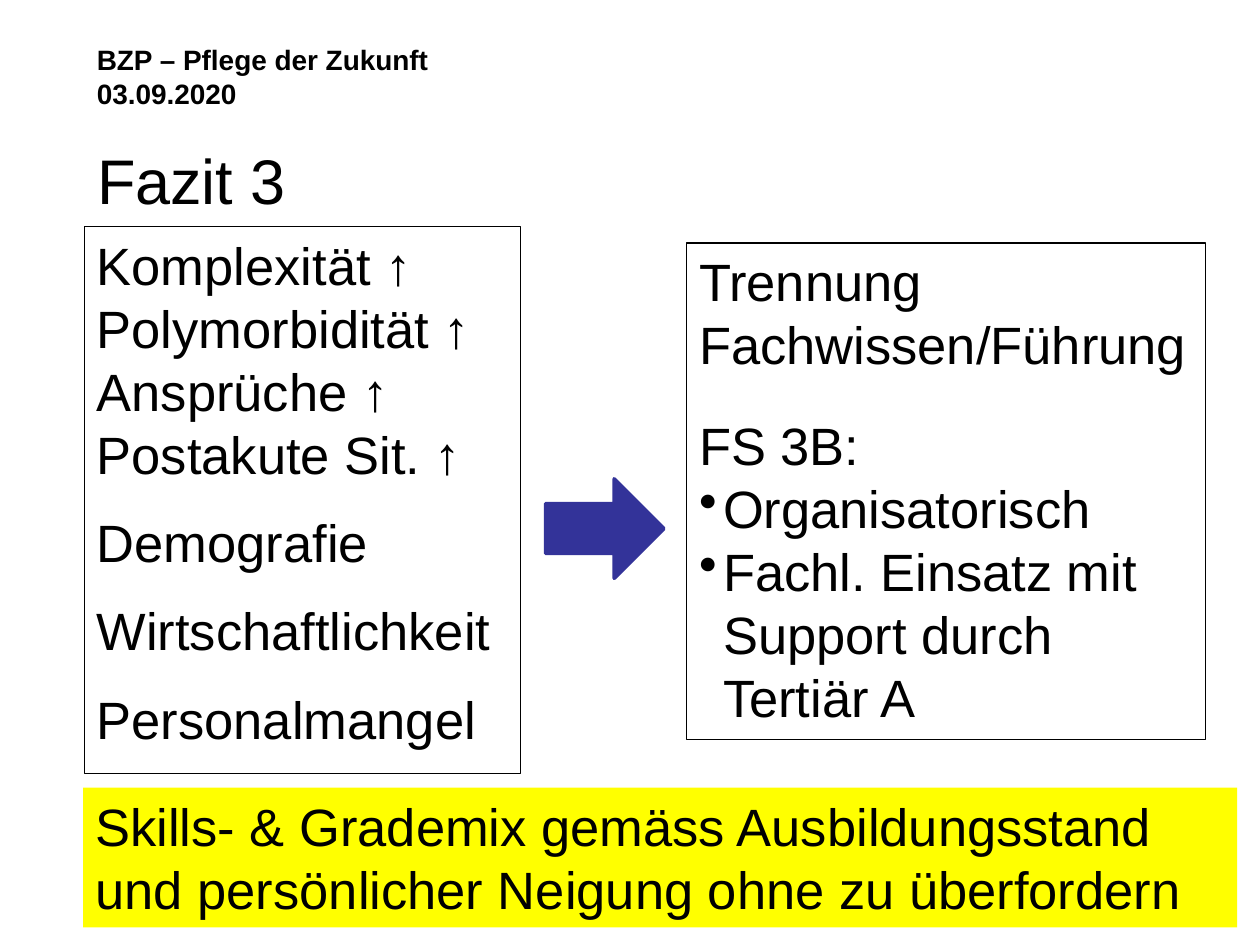
from pptx import Presentation
from pptx.dml.color import RGBColor
from pptx.enum.shapes import MSO_SHAPE as SHAPE
from pptx.enum.text import MSO_ANCHOR as ANCHOR, PP_ALIGN as ALIGN
from pptx.oxml.ns import qn
from pptx.util import Inches, Pt
from lxml.etree import SubElement

BLACK = RGBColor(0x00, 0x00, 0x00)
BLUE = RGBColor(0x33, 0x33, 0x99)
YELLOW = RGBColor(0xFF, 0xFF, 0x00)

FONT = "Arial"
BODY = 30
LEFT = 0.67       # common left edge, inches
SMALL_GAP = 14.4  # points between the topics
LARGE_GAP = 21.6  # points before the list heading


def place(sp, left, top, width, height):
    sp.left, sp.top = Inches(left), Inches(top)
    sp.width, sp.height = Inches(width), Inches(height)


def add_bullet(p, indent=0.19):
    pPr = p._p.get_or_add_pPr()
    pPr.set("marL", str(Inches(indent)))
    pPr.set("indent", str(-Inches(indent)))
    SubElement(pPr, qn("a:buChar")).set("char", "•")


def write(p, text, size=BODY, bold=False, before=0, bullet=False):
    p.alignment = ALIGN.LEFT
    p.line_spacing = 1.0
    p.space_before = Pt(before)
    if bullet:
        add_bullet(p)
    r = p.add_run()
    r.text = text
    r.font.name, r.font.size, r.font.bold = FONT, Pt(size), bold
    r.font.color.rgb = BLACK


def fill_frame(sp, lines, **fmt):
    """Each line is a text, or a pair of text and its own format."""
    tf = sp.text_frame
    tf.word_wrap = True
    tf.vertical_anchor = ANCHOR.TOP
    for i, line in enumerate(lines):
        text, own = (line, {}) if isinstance(line, str) else line
        p = tf.add_paragraph() if i else tf.paragraphs[0]
        write(p, text, **{**fmt, **own})


def add_header(slide, lines, *box):
    sp = slide.shapes.add_textbox(*map(Inches, box))
    fill_frame(sp, lines, size=16, bold=True)


def set_title(slide, text, *box):
    sp = slide.shapes.title
    place(sp, *box)
    fill_frame(sp, [text], size=36)


def add_block(slide, kind, *box, fill=None, line=None, weight=0.75, lines=()):
    sp = slide.shapes.add_shape(kind, *map(Inches, box))
    sp.shadow.inherit = False
    if fill is None:
        sp.fill.background()
    else:
        sp.fill.solid()
        sp.fill.fore_color.rgb = fill
    if line is None:
        sp.line.fill.background()
    else:
        sp.line.color.rgb = line
        sp.line.width = Pt(weight)
    fill_frame(sp, lines)


def main():
    prs = Presentation()
    prs.slide_width, prs.slide_height = Inches(10), Inches(7.5)
    slide = prs.slides.add_slide(prs.slide_layouts[5])

    # Header and title
    add_header(slide, ["BZP – Pflege der Zukunft", "03.09.2020"],
               LEFT, 0.29, 3.31, 0.64)
    set_title(slide, "Fazit 3", LEFT, 1.07, 8.17, 0.64)

    # Challenges
    topics = ["Demografie", "Wirtschaftlichkeit", "Personalmangel"]
    add_block(slide, SHAPE.RECTANGLE, LEFT, 1.8, 3.46, 4.34, line=BLACK,
              lines=["Komplexität ↑ Polymorbidität ↑ Ansprüche ↑ Postakute Sit. ↑",
                     *((t, {"before": SMALL_GAP}) for t in topics)])

    # Consequences
    add_block(slide, SHAPE.RECTANGLE, 5.45, 1.93, 4.12, 3.94, line=BLACK,
              lines=["Trennung Fachwissen/Führung",
                     ("FS 3B:", {"before": LARGE_GAP}),
                     ("Organisatorisch", {"bullet": True}),
                     ("Fachl. Einsatz mit Support durch Tertiär A",
                      {"bullet": True})])

    # Arrow from challenges to consequences
    add_block(slide, SHAPE.RIGHT_ARROW, 4.33, 3.8, 0.94, 0.79,
              fill=BLUE, line=BLUE, weight=2)

    # Conclusion
    add_block(slide, SHAPE.RECTANGLE, 0.66, 6.25, 9.16, 1.11, fill=YELLOW,
              lines=["Skills- & Grademix gemäss Ausbildungsstand "
                     "und persönlicher Neigung ohne zu überfordern"])

    prs.save("out.pptx")


if __name__ == "__main__":
    main()
